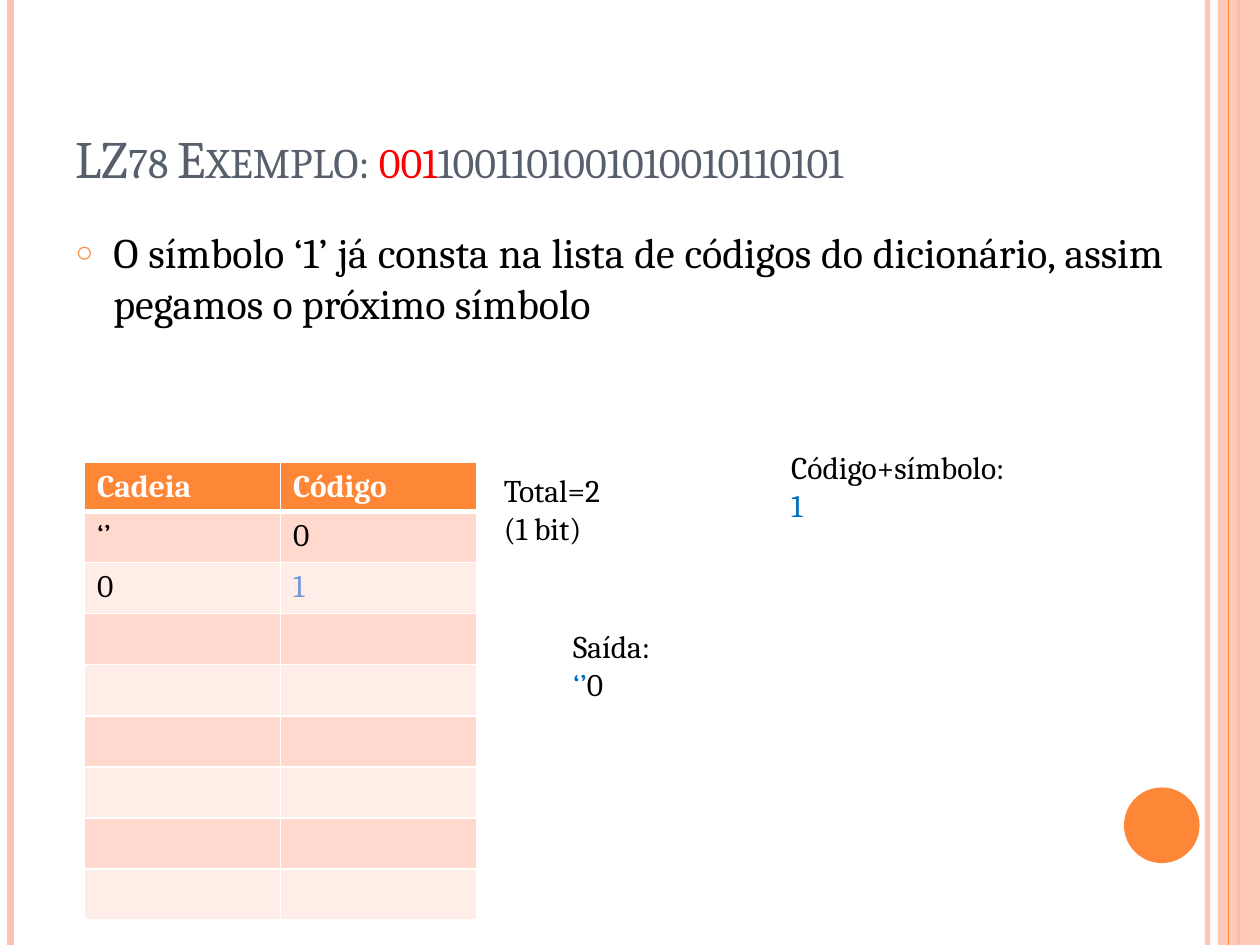
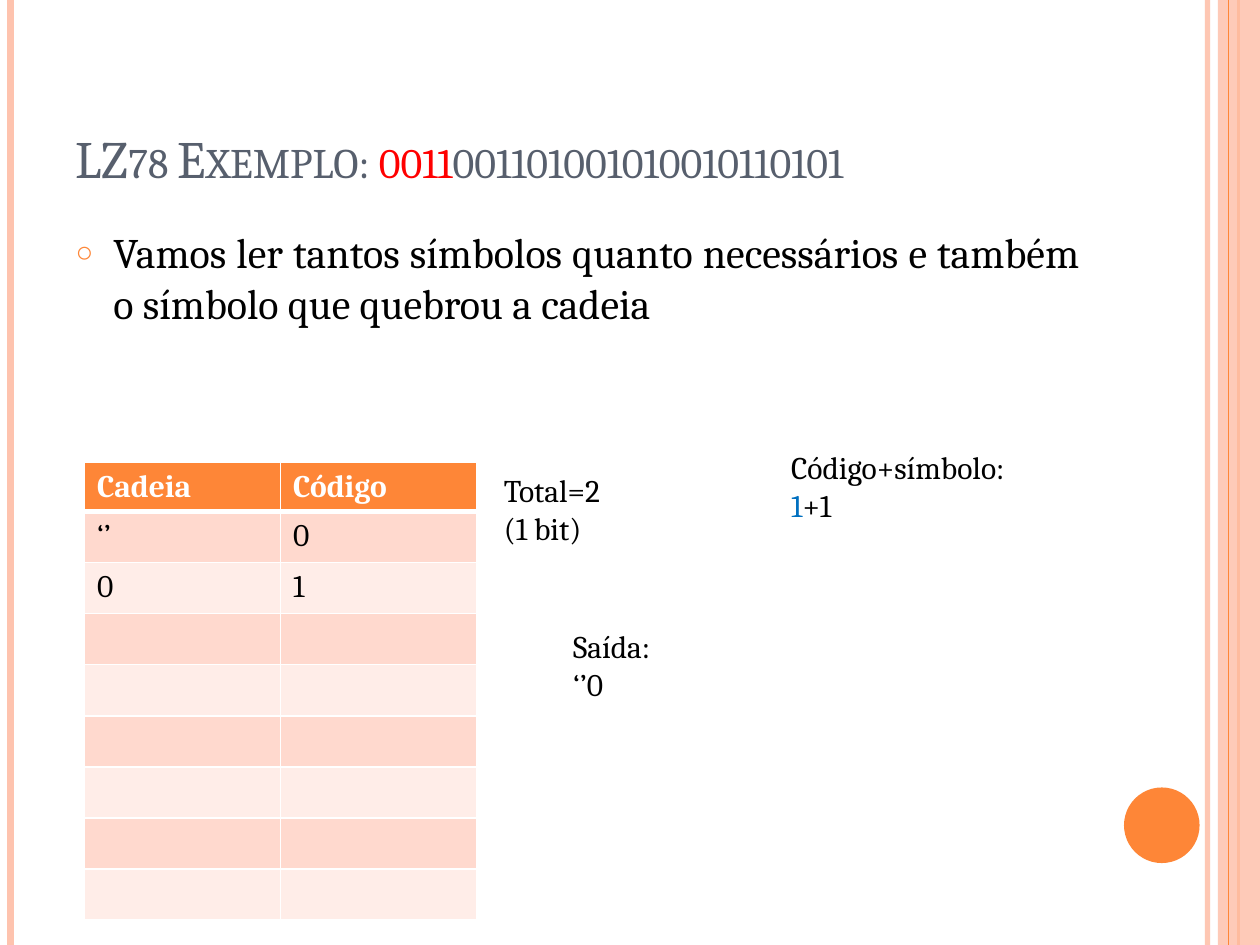
from dataclasses import dataclass

from lxml import etree
from pptx import Presentation
from pptx.dml.color import RGBColor
from pptx.enum.shapes import MSO_CONNECTOR, MSO_SHAPE
from pptx.enum.text import MSO_ANCHOR, MSO_AUTO_SIZE, PP_ALIGN
from pptx.oxml.ns import qn
from pptx.util import Pt

STRAIGHT = MSO_CONNECTOR.STRAIGHT
RECTANGLE, OVAL = MSO_SHAPE.RECTANGLE, MSO_SHAPE.OVAL
LEFT, JUSTIFY = PP_ALIGN.LEFT, PP_ALIGN.JUSTIFY
BOTTOM, TOP = MSO_ANCHOR.BOTTOM, MSO_ANCHOR.TOP
NO_FIT, GROW = MSO_AUTO_SIZE.NONE, MSO_AUTO_SIZE.SHAPE_TO_FIT_TEXT


@dataclass(frozen=True)
class Theme:
    font: str = "Cambria"
    title_size: int = 30
    body_size: int = 24
    note_size: int = 18
    title: str = "575F6D"
    read: str = "FF0000"
    text: str = "000000"
    mark: str = "0070C0"
    code: str = "7598D9"
    accent: str = "FE8637"
    pale: str = "FEC3AE"
    white: str = "FFFFFF"
    bands: tuple = ("FFD9CE", "FFEDE8")


THEME = Theme()

# Content: a text line is a list of (words, colour) spans
BITS = "0011001101001010010110101"
TITLE = "LZ78 Exemplo: "
HEADER = ("Cadeia", "Código")
EMPTY_ROWS = 6
TOTAL = [[("Total=2", THEME.text)], [("(1 bit)", THEME.text)]]

STEPS = [
    {
        "bits_read": 3,
        "body": "O símbolo ‘1’ já consta na lista de códigos do dicionário, "
                "assim pegamos o próximo símbolo",
        "body_width": 636,
        "code_colour": THEME.code,
        "pair": [("1", THEME.mark)],
        "output": [("‘’", THEME.mark), ("0", THEME.text)],
    },
    {
        "bits_read": 4,
        "body": "Vamos ler tantos símbolos quanto necessários e também "
                "o símbolo que quebrou a cadeia",
        "body_width": 588,
        "code_colour": THEME.text,
        "pair": [("1", THEME.mark), ("+1", THEME.text)],
        "output": [("‘’0", THEME.text)],
    },
]

# Layout, in points
PAGE_WIDTH, PAGE_HEIGHT = 720, 540
TITLE_AREA = (36, 21.6, 588, 90)
BODY_LEFT, BODY_TOP, BODY_HEIGHT = 36, 126, 384
BODY_INDENT = 21.6
TABLE_AREA = (48.24, 264.24, 224, 262)
HEADER_HEIGHT, ROW_HEIGHT = 12.24, 29.2
PAIR_AREA = (445, 252.7, 152, 51)
OUTPUT_AREA = (320.4, 355, 67.7, 51)
TOTAL_AREA = (280.8, 265.7, 80, 51)
SIDE_BAND = (696, 0, 24, PAGE_HEIGHT)
CIRCLE = (642.3, 450, 43.2, 43.2)
# x, colour, width, opacity in percent
RULES_BELOW = [(690, THEME.pale, 3, 93), (6, THEME.pale, 4.5, 100),
               (707.8, THEME.accent, 1.5, 100)]
RULES_ABOVE = [(702, THEME.accent, 0.75, 100)]


def points(*values):
    return [Pt(value) for value in values]


def rgb(colour):
    return RGBColor.from_string(colour)


def add_node(parent, tag, **attributes):
    return etree.SubElement(parent, qn(tag), attributes)


def set_opacity(element, percent):
    if percent < 100:
        colour = next(element.iter(qn("a:srgbClr")))
        add_node(colour, "a:alpha", val=str(percent * 1000))


def add_spans(para, spans, size, bold=False, small_caps=False):
    for words, colour in spans:
        span = para.add_run()
        span.text = words
        span.font.name = THEME.font
        span.font.size = Pt(size)
        span.font.bold = bold
        span.font.color.rgb = rgb(colour)
        if small_caps:
            span._r.get_or_add_rPr().set("cap", "small")


# Shared decoration
def add_rule(page, x, colour, width, opacity):
    rule = page.shapes.add_connector(STRAIGHT, *points(x, 0, x, PAGE_HEIGHT))
    rule.line.color.rgb = rgb(colour)
    rule.line.width = Pt(width)
    properties = rule._element.spPr
    set_opacity(properties, opacity)
    add_node(properties, "a:effectLst")


def add_filled(page, kind, area, colour, opacity=100):
    shape = page.shapes.add_shape(kind, *points(*area))
    shape.shadow.inherit = False
    shape.fill.solid()
    shape.fill.fore_color.rgb = rgb(colour)
    shape.line.fill.background()
    set_opacity(shape._element.spPr, opacity)


def add_decoration(page):
    for rule in RULES_BELOW:
        add_rule(page, *rule)
    add_filled(page, RECTANGLE, SIDE_BAND, THEME.pale, 87)
    for rule in RULES_ABOVE:
        add_rule(page, *rule)
    add_filled(page, OVAL, CIRCLE, THEME.accent)


# Title and body placeholders
def place(box, area, anchor):
    box.left, box.top, box.width, box.height = points(*area)
    frame = box.text_frame
    frame.word_wrap = True
    frame.auto_size = NO_FIT
    frame.vertical_anchor = anchor
    return frame.paragraphs[0]


def fill_title(page, bits_read):
    para = place(page.shapes.title, TITLE_AREA, BOTTOM)
    para.alignment = LEFT
    spans = [(TITLE, THEME.title), (BITS[:bits_read], THEME.read),
             (BITS[bits_read:], THEME.title)]
    add_spans(para, spans, THEME.title_size, small_caps=True)


def fill_body(page, words, width):
    area = (BODY_LEFT, BODY_TOP, width, BODY_HEIGHT)
    para = place(page.placeholders[1], area, TOP)
    para.alignment = JUSTIFY
    para.space_before = Pt(6)
    properties = para._p.get_or_add_pPr()
    properties.set("marL", str(Pt(BODY_INDENT)))
    properties.set("indent", str(-Pt(BODY_INDENT)))
    bullet_colour = add_node(properties, "a:buClr")
    add_node(bullet_colour, "a:srgbClr", val=THEME.accent)
    add_node(properties, "a:buSzPct", val="70000")
    add_node(properties, "a:buChar", char="○")
    add_spans(para, [(words, THEME.text)], THEME.body_size)


# Dictionary table
def set_borders(cell, bottom_width):
    properties = cell._tc.get_or_add_tcPr()
    widths = {"a:lnL": 1, "a:lnR": 1, "a:lnT": 1, "a:lnB": bottom_width}
    for index, (tag, width) in enumerate(widths.items()):
        border = etree.Element(qn(tag), w=str(Pt(width)))
        fill = add_node(border, "a:solidFill")
        add_node(fill, "a:srgbClr", val=THEME.white)
        properties.insert(index, border)


def add_dictionary(page, code_colour):
    rows = [
        [(name, THEME.white) for name in HEADER],
        [("‘’", THEME.text), ("0", THEME.text)],
        [("0", THEME.text), ("1", code_colour)],
    ] + [[None, None]] * EMPTY_ROWS
    frame = page.shapes.add_table(len(rows), len(HEADER), *points(*TABLE_AREA))
    table = frame.table
    for r, spans in enumerate(rows):
        is_header = r == 0
        table.rows[r].height = Pt(HEADER_HEIGHT if is_header else ROW_HEIGHT)
        for c, span in enumerate(spans):
            cell = table.cell(r, c)
            cell.fill.solid()
            colour = THEME.accent if is_header else THEME.bands[(r - 1) % 2]
            cell.fill.fore_color.rgb = rgb(colour)
            set_borders(cell, 3 if is_header else 1)
            if span:
                add_spans(cell.text_frame.paragraphs[0], [span],
                          THEME.note_size, bold=is_header)
    frame.height = Pt(TABLE_AREA[3])


# Notes beside the table
def add_note(page, area, lines):
    frame = page.shapes.add_textbox(*points(*area)).text_frame
    frame.word_wrap = False
    frame.auto_size = GROW
    for index, spans in enumerate(lines):
        para = frame.add_paragraph() if index else frame.paragraphs[0]
        para.alignment = LEFT
        add_spans(para, spans, THEME.note_size)


def add_step(deck, step):
    page = deck.slides.add_slide(deck.slide_layouts[1])
    add_decoration(page)
    fill_title(page, step["bits_read"])
    fill_body(page, step["body"], step["body_width"])
    add_dictionary(page, step["code_colour"])
    add_note(page, PAIR_AREA, [[("Código+símbolo:", THEME.text)], step["pair"]])
    add_note(page, OUTPUT_AREA, [[("Saída:", THEME.text)], step["output"]])
    add_note(page, TOTAL_AREA, TOTAL)


def main():
    deck = Presentation()
    deck.slide_width, deck.slide_height = points(PAGE_WIDTH, PAGE_HEIGHT)
    for step in STEPS:
        add_step(deck, step)
    deck.save("out.pptx")


if __name__ == "__main__":
    main()
